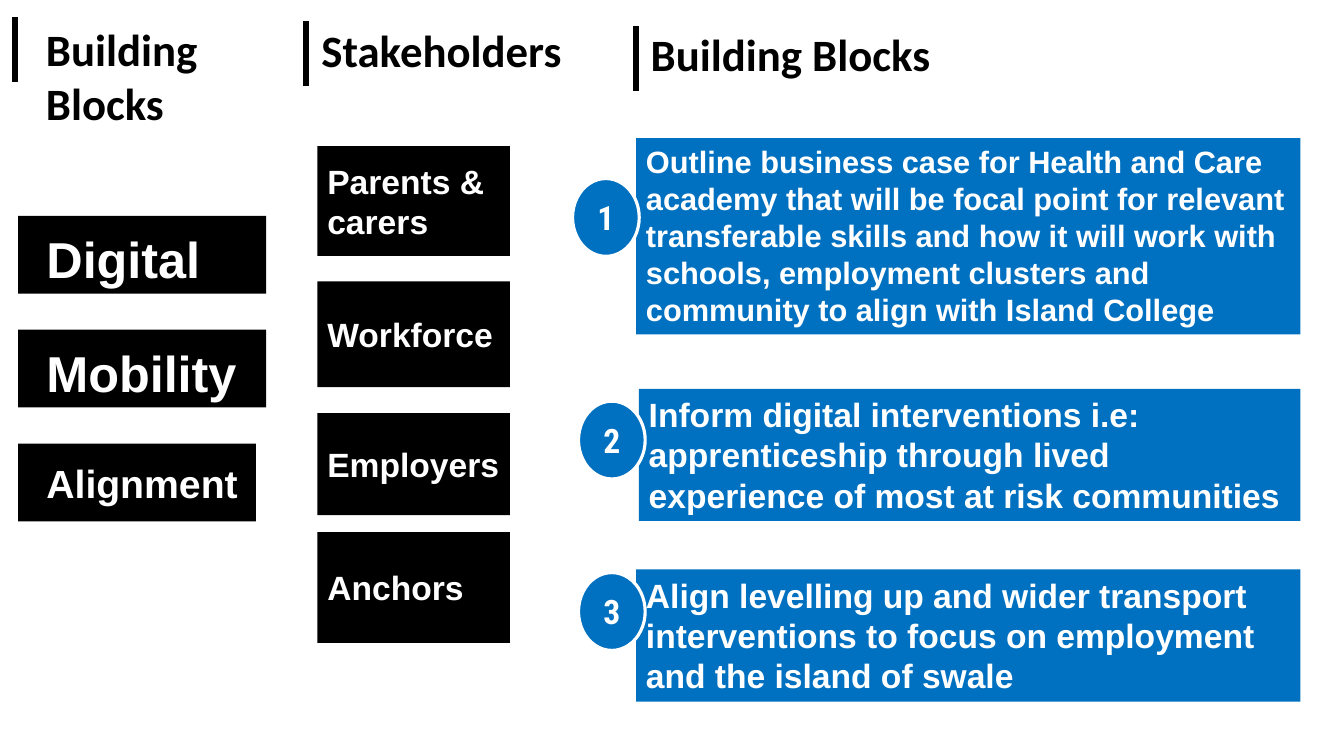
from lxml.etree import SubElement
from pptx import Presentation
from pptx.dml.color import RGBColor
from pptx.enum.shapes import MSO_CONNECTOR, MSO_SHAPE
from pptx.enum.text import MSO_ANCHOR, MSO_AUTO_SIZE, PP_ALIGN
from pptx.oxml.ns import qn
from pptx.util import Cm, Pt

COLORS = {"black": "000000", "blue": "0070C0", "white": "FFFFFF"}

# Left, bar top, text left, text top, width, height, text
HEADS = [
    (0.38, 0.43, 0.91, 0.43, 6.68, 3.0, "Building Blocks"),
    (7.72, 0.53, 7.85, 0.46, 8.38, 1.63, "Stakeholders"),
    (16.03, 0.66, 16.15, 0.56, 11.86, 1.63, "Building Blocks"),
]
# Width, size, anchor, text
THEMES = [
    (6.25, 36, MSO_ANCHOR.BOTTOM, "Digital"),
    (6.25, 36, MSO_ANCHOR.BOTTOM, "Mobility"),
    (5.99, 28, MSO_ANCHOR.MIDDLE, "Alignment"),
]
# Top, height, text
GROUPS = [
    (3.68, 2.77, "Parents & carers"),
    (7.09, 2.67, "Workforce"),
    (10.41, 2.57, "Employers"),
    (13.41, 2.79, "Anchors"),
]
# Left, top, height, size, badge left, badge top, text
STEPS = [
    (16.03, 3.48, 4.95, 22, 14.43, 4.5,
     "Outline business case for Health and Care academy that will be focal "
     "point for relevant transferable skills and how it will work with "
     "schools, employment clusters and community to align with Island College"),
    (16.1, 9.8, 3.33, 24, 14.58, 10.11,
     "Inform digital interventions i.e: apprenticeship through lived "
     "experience of most at risk communities"),
    (16.03, 14.35, 3.33, 24, 14.58, 14.43,
     "Align levelling up and wider transport interventions to focus on "
     "employment and the island of swale"),
]
RIGHT = 32.77


def color(name):
    return RGBColor.from_string(COLORS[name])


def write(shape, text, size=24, font="Arial", ink="white",
          align=PP_ALIGN.LEFT, anchor=MSO_ANCHOR.MIDDLE, inset=0.25,
          grow=False):
    frame = shape.text_frame
    frame.word_wrap = True
    frame.vertical_anchor = anchor
    frame.margin_left = Cm(inset)
    if grow:
        frame.auto_size = MSO_AUTO_SIZE.SHAPE_TO_FIT_TEXT
    para = frame.paragraphs[0]
    para.alignment = align
    run = para.add_run()
    run.text = text
    run.font.size = Pt(size)
    run.font.name = font
    run.font.bold = True
    run.font.color.rgb = color(ink)


def add_block(slide, box, fill, kind=MSO_SHAPE.RECTANGLE, edge=None):
    shape = slide.shapes.add_shape(kind, *map(Cm, box))
    shape.shadow.inherit = False
    shape.fill.solid()
    shape.fill.fore_color.rgb = color(fill)
    if edge:
        shape.line.color.rgb = color(edge)
        shape.line.width = Pt(2.25)
    else:
        shape.line.fill.background()
    return shape


def add_bar(slide, left, top):
    bar = slide.shapes.add_connector(
        MSO_CONNECTOR.STRAIGHT, Cm(left), Cm(top), Cm(left), Cm(top + 1.63))
    bar.line.color.rgb = color("black")
    bar.line.width = Pt(4.5)
    SubElement(bar._element.spPr, qn("a:effectLst"))


def add_head(slide, bar_left, bar_top, left, top, width, height, text):
    add_bar(slide, bar_left, bar_top)
    box = slide.shapes.add_textbox(Cm(left), Cm(top), Cm(width), Cm(height))
    write(box, text, size=32, font="Calibri", ink="black",
          anchor=MSO_ANCHOR.TOP, grow=True)


def add_badge(slide, left, top, number):
    badge = add_block(slide, (left, top, 1.68, 1.96), "blue",
                      kind=MSO_SHAPE.OVAL, edge="white")
    write(badge, str(number), font="Roboto Condensed", align=PP_ALIGN.CENTER)


def main():
    deck = Presentation()
    deck.slide_width, deck.slide_height = Cm(33.87), Cm(19.05)
    slide = deck.slides.add_slide(deck.slide_layouts[6])

    for row, (width, size, anchor, text) in enumerate(THEMES):
        block = add_block(slide, (0.46, 5.44 + 2.87 * row, width, 1.96), "black")
        write(block, text, size=size, anchor=anchor, inset=0.71)

    for left, top, height, size, _, _, text in STEPS:
        block = add_block(slide, (left, top, RIGHT - left, height), "blue")
        write(block, text, size=size, anchor=MSO_ANCHOR.TOP, grow=True)
    for number, step in enumerate(STEPS, 1):
        add_badge(slide, step[4], step[5], number)

    for head in HEADS:
        add_head(slide, *head)

    for top, height, text in GROUPS:
        write(add_block(slide, (8.0, top, 4.85, height), "black"), text)

    deck.save("out.pptx")


if __name__ == "__main__":
    main()
